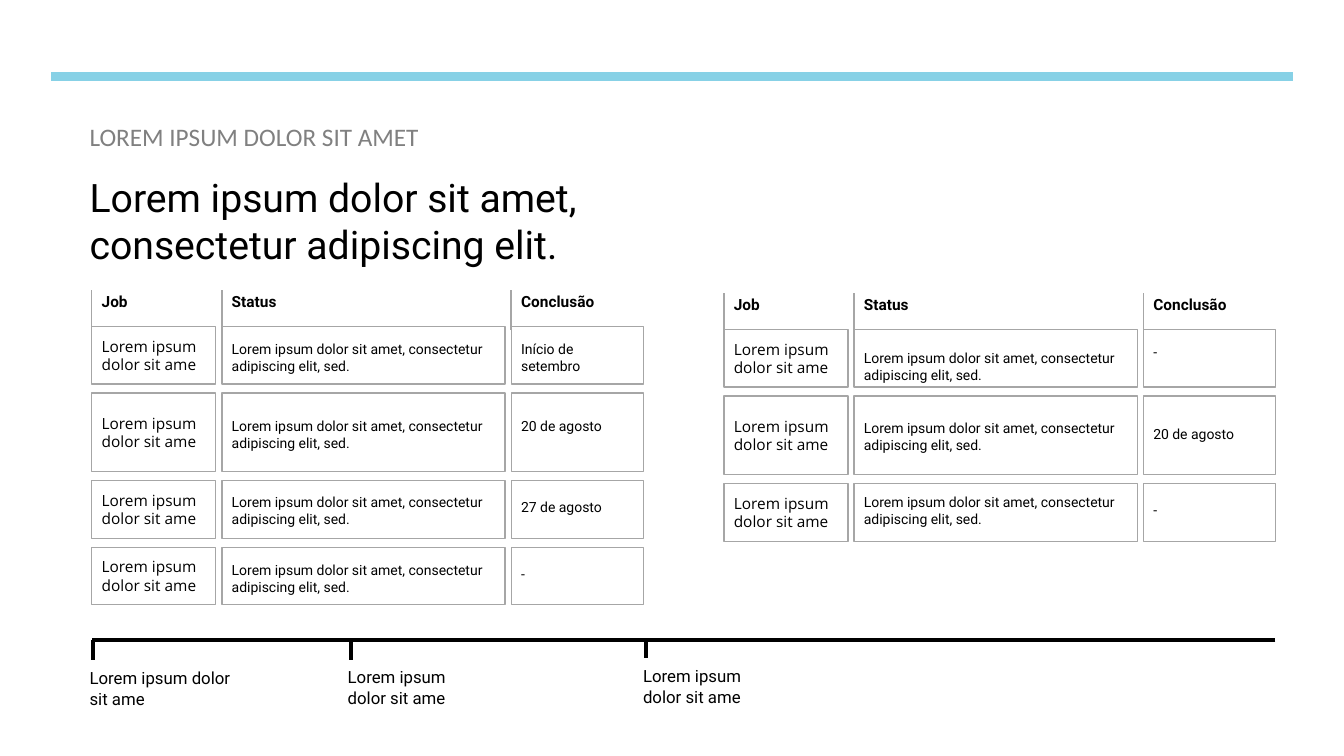
import pptx
import pptx.util
import pptx.dml.color
import pptx.enum.shapes
import pptx.enum.text
import pptx.oxml

# Content
KICKER = "LOREM IPSUM DOLOR SIT AMET"
TITLE = "Lorem ipsum dolor sit amet, consectetur adipiscing elit."
HEADERS = ["Job", "Status", "Conclusão"]
JOB = "Lorem ipsum dolor sit ame"
STATUS = "Lorem ipsum dolor sit amet, consectetur adipiscing elit, sed."

# Each row: conclusion, drop of the status text, drop of the conclusion text
TABLES = [
    {"left": 0.91, "top": 3.24, "rows": [
        ("Início de setembro", 0.09, 0.09),
        ("20 de agosto", 0.19, 0.19),
        ("27 de agosto", 0.08, 0.13),
        ("-", 0.09, 0.13)]},
    {"left": 7.18, "top": 3.27, "rows": [
        ("-", 0.15, 0.09),
        ("20 de agosto", 0.18, 0.24),
        ("-", 0.05, 0.13)]},
]

# Each milestone: tick position, tick top, label width, label top
MILESTONES = [
    (0.92, 6.35, 1.68, 6.58),
    (3.48, 6.35, 1.45, 6.57),
    (6.41, 6.33, 1.36, 6.56),
]

# Grid and style
COLUMN_WIDTHS = [1.23, 2.81, 1.31]
ROW_HEIGHTS = [0.57, 0.78, 0.57, 0.57]
COLUMN_GAP, ROW_GAP = 0.06, 0.09
HEADER_RISE, TEXT_TRIM = 0.39, 0.08
TIMELINE_Y, TICK_HEIGHT = 6.35, 0.2
COLORS = {"bar": "87D1E6", "border": "A6A6A6", "ink": "000000", "kicker": "808080"}

Inches, Pt = pptx.util.Inches, pptx.util.Pt
SHAPES = pptx.enum.shapes.MSO_SHAPE

presentation = pptx.Presentation()
presentation.slide_width, presentation.slide_height = Inches(13.33), Inches(7.5)
slide = presentation.slides.add_slide(presentation.slide_layouts[6])


def color(name):
    return pptx.dml.color.RGBColor.from_string(COLORS[name])


def write(shape, text, size, font="Roboto", ink="ink", bold=False):
    shape.text_frame.text = text
    shape.text_frame.word_wrap = True
    paragraph = shape.text_frame.paragraphs[0]
    paragraph.alignment = pptx.enum.text.PP_ALIGN.LEFT
    run_font = paragraph.runs[0].font
    run_font.name, run_font.size, run_font.bold = font, Pt(size), bold
    run_font.color.rgb = color(ink)


def add_text(left, top, width, height, text, size, **style):
    box = slide.shapes.add_textbox(*map(Inches, (left, top, width, height)))
    write(box, text, size, **style)
    box.text_frame.auto_size = pptx.enum.text.MSO_AUTO_SIZE.SHAPE_TO_FIT_TEXT


def add_line(x1, y1, x2, y2, ink, weight):
    line = slide.shapes.add_connector(
        pptx.enum.shapes.MSO_CONNECTOR.STRAIGHT, *map(Inches, (x1, y1, x2, y2)))
    line.line.color.rgb = color(ink)
    line.line.width = Pt(weight)
    properties = line._element.spPr
    properties.append(properties.makeelement(pptx.oxml.ns.qn("a:effectLst"), {}))


def add_cell(left, top, width, height, preset=SHAPES.RECTANGLE):
    cell = slide.shapes.add_shape(preset, *map(Inches, (left, top, width, height)))
    cell.shadow.inherit = False
    cell.fill.background()
    cell.line.color.rgb = color("border")
    cell.line.width = Pt(1)
    return cell


def starts(first, sizes, gap):
    return [first + sum(sizes[:i]) + gap * i for i in range(len(sizes))]


# Top bar and headings
add_line(12.82, 0.76, 0.51, 0.76, "bar", 6)
add_text(0.79, 1.15, 5.87, 0.4, KICKER, 18, font="Calibri", ink="kicker")
add_text(0.79, 1.67, 6.15, 1.04, TITLE, 28)

# Job tables
for table in TABLES:
    columns = starts(table["left"], COLUMN_WIDTHS, COLUMN_GAP)
    for header, left in zip(HEADERS, columns):
        add_line(left, table["top"] + 0.03, left, table["top"] - 0.36, "border", 1)
        add_text(left, table["top"] - HEADER_RISE, 1.01, 0.29, header, 11, bold=True)

    row_tops = starts(table["top"], ROW_HEIGHTS, ROW_GAP)
    for row, top, height in zip(table["rows"], row_tops, ROW_HEIGHTS):
        conclusion, status_drop, conclusion_drop = row
        job = add_cell(columns[0], top, COLUMN_WIDTHS[0], height, SHAPES.ROUNDED_RECTANGLE)
        job.adjustments[0] = 0
        write(job, JOB, 11, font="Open Sans")
        job.text_frame.vertical_anchor = pptx.enum.text.MSO_ANCHOR.MIDDLE

        texts = [(STATUS, status_drop, 0.44), (conclusion, conclusion_drop, 0.27)]
        for (text, drop, text_height), left, width in zip(texts, columns[1:], COLUMN_WIDTHS[1:]):
            add_cell(left, top, width, height)
            add_text(left, top + drop, width - TEXT_TRIM, text_height, text, 10)

# Timeline
add_line(12.65, TIMELINE_Y, 0.91, TIMELINE_Y, "ink", 3)
for x, tick_top, label_width, label_top in MILESTONES:
    add_line(x, tick_top, x, tick_top + TICK_HEIGHT, "ink", 3)
    add_text(x - 0.13, label_top, label_width, 0.5, JOB, 12)

presentation.save("out.pptx")
